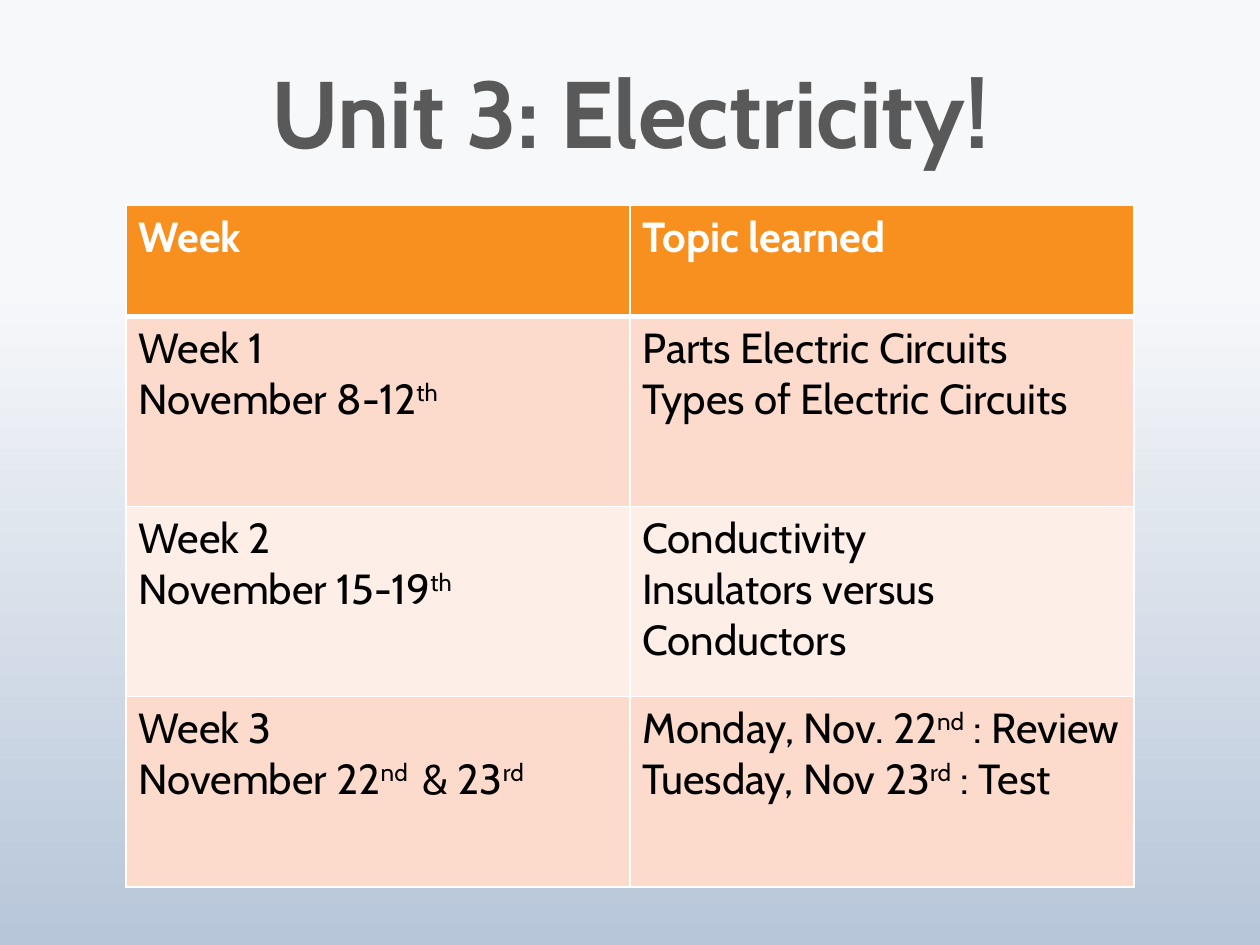
"""Build the Unit 3 electricity schedule slide."""
import lxml.etree
import pptx
import pptx.dml.color
import pptx.enum.text
import pptx.oxml.ns
import pptx.util

HEAD = "Unit 3: Electricity!"
ROWS = [
    (["Week"], ["Topic learned"]),
    (["Week 1", "November 8-12^th"],
     ["Parts Electric Circuits", "Types of Electric Circuits"]),
    (["Week 2", "November 15-19^th"],
     ["Conductivity", "Insulators versus Conductors"]),
    (["Week 3", "November 22^nd ^ & 23^rd"],
     ["Monday, Nov. 22^nd^ : Review", "Tuesday, Nov 23^rd^ : Test"]),
]
THEME = {
    "sky": [(0.3, "F7F8FA"), (1, "B7C6D9")],
    "fills": ["F7901E", "FCDBCD", "FDEEE8"],
    "edge": "FFFFFF",
    "title": {"name": "Cabin", "size": pptx.util.Pt(54), "bold": True, "ink": "595959"},
    "top": {"name": "Cabin", "size": pptx.util.Pt(24), "bold": True, "ink": "FFFFFF"},
    "body": {"name": "Cabin", "size": pptx.util.Pt(24), "bold": False, "ink": "000000"},
}
WIDE, HIGH = pptx.util.Inches(10), pptx.util.Inches(7.5)
LEFT, SPAN = WIDE // 10, WIDE * 8 // 10
TOP = pptx.util.Inches(1.63)
TALL = [pptx.util.Inches(h) for h in (0.88, 1.51, 1.51, 1.51)]


def rgb(code):
    return pptx.dml.color.RGBColor.from_string(code)


def put(item, vals):
    for key, val in vals.items():
        setattr(item, key, val)


def write(para, text, look):
    for num, part in enumerate(text.split("^")):
        run = para.add_run()
        run.text = part
        put(run.font, {k: v for k, v in look.items() if k != "ink"})
        run.font.color.rgb = rgb(look["ink"])
        if num % 2:
            run.font._element.set("baseline", "30000")


def edge(cell, sides):
    props = cell._tc.get_or_add_tcPr()
    qn = pptx.oxml.ns.qn
    for spot, (side, size) in enumerate(sides.items()):
        line = lxml.etree.Element(qn("a:ln" + side), w=str(pptx.util.Pt(size)))
        fill = lxml.etree.SubElement(line, qn("a:solidFill"))
        lxml.etree.SubElement(fill, qn("a:srgbClr"), val=THEME["edge"])
        props.insert(spot, line)


def paint(slide):
    fill = slide.background.fill
    fill.gradient()
    fill.gradient_angle = 270
    for stop, (place, code) in zip(fill.gradient_stops, THEME["sky"]):
        stop.position = place
        stop.color.rgb = rgb(code)


def title(slide):
    box = slide.shapes.add_textbox(LEFT, pptx.util.Inches(0.25), SPAN, pptx.util.Inches(1.38))
    put(box.text_frame, {"word_wrap": True, "vertical_anchor": pptx.enum.text.MSO_ANCHOR.MIDDLE})
    para = box.text_frame.paragraphs[0]
    put(para, {"alignment": pptx.enum.text.PP_ALIGN.CENTER, "line_spacing": pptx.util.Pt(56)})
    write(para, HEAD, THEME["title"])


def table(slide):
    grid = slide.shapes.add_table(len(ROWS), 2, LEFT, TOP, SPAN, sum(TALL)).table
    for row, pair in enumerate(ROWS):
        grid.rows[row].height = TALL[row]
        look = THEME["body" if row else "top"]
        code = THEME["fills"][2 - row % 2 if row else 0]
        sides = {"L": 1, "R": 1, "T": 3 if row == 1 else 1, "B": 1 if row else 3}
        for col, lines in enumerate(pair):
            cell = grid.cell(row, col)
            cell.fill.solid()
            cell.fill.fore_color.rgb = rgb(code)
            edge(cell, sides)
            frame = cell.text_frame
            for num, text in enumerate(lines):
                para = frame.add_paragraph() if num else frame.paragraphs[0]
                write(para, text, look)


def main():
    deck = pptx.Presentation()
    put(deck, {"slide_width": WIDE, "slide_height": HIGH})
    slide = deck.slides.add_slide(deck.slide_layouts[6])
    paint(slide)
    title(slide)
    table(slide)
    deck.save("out.pptx")


if __name__ == "__main__":
    main()
